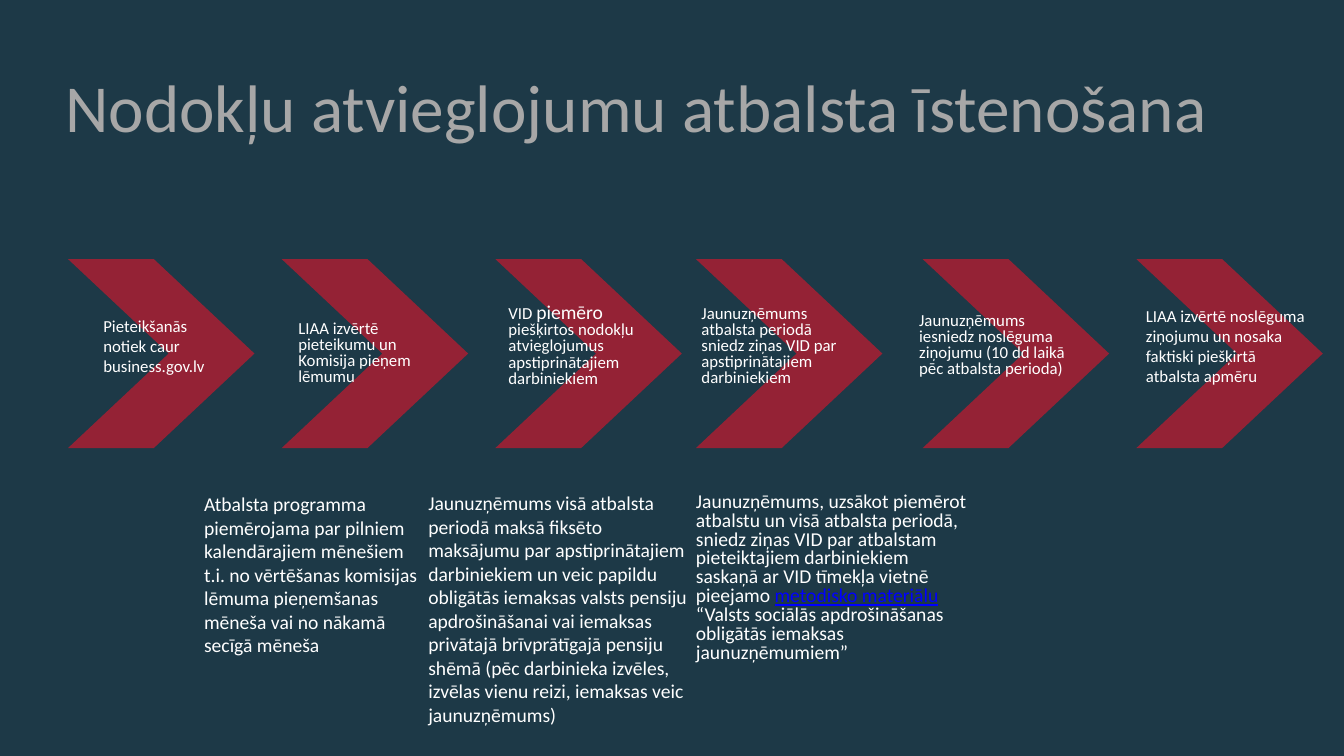
from dataclasses import dataclass
from typing import Optional

from pptx import Presentation
from pptx.dml.color import RGBColor
from pptx.enum.shapes import MSO_SHAPE
from pptx.enum.text import MSO_ANCHOR, MSO_AUTO_SIZE, PP_ALIGN
from pptx.util import Emu, Pt

PX = 9144  # 100 px to the inch


@dataclass(frozen=True)
class Theme:
    font: str = "Calibri"
    background: RGBColor = RGBColor(0x1D, 0x39, 0x47)
    chevron: RGBColor = RGBColor(0x94, 0x22, 0x35)
    title: RGBColor = RGBColor(0xA7, 0xA7, 0xA7)
    text: RGBColor = RGBColor(0xFF, 0xFF, 0xFF)
    link: RGBColor = RGBColor(0x00, 0x00, 0xFF)
    title_size: int = 96
    step_size: int = 24
    note_size: int = 28


THEME = Theme()


@dataclass(frozen=True)
class Span:
    text: str
    size: Optional[int] = None
    link: bool = False


@dataclass(frozen=True)
class Box:
    left: int
    top: int
    width: int
    height: int
    spans: tuple[Span, ...]
    inset: int
    spacing: Optional[float] = None
    grow: bool = True


# Chevron row: an even pitch, with the fourth pulled left
CHEVRON_LEFT, CHEVRON_PITCH = 135, 424
CHEVRON_TOP, CHEVRON_W, CHEVRON_H = 514, 370, 375
CHEVRON_SHIFT = {3: -26}

STEPS = (
    Box(194, 615, 251, 143, (Span("Pieteikšanās notiek caur business.gov.lv"),), 11),
    Box(581, 610, 280, 184,
        (Span("LIAA izvērtē pieteikumu un Komisija pieņem lēmumu"),), 11, 0.8),
    Box(998, 591, 280, 190,
        (Span("VID "), Span("piemēro", size=THEME.note_size),
         Span(" piešķirtos nodokļu atvieglojumus apstiprinātajiem darbiniekiem")), 11, 0.8),
    Box(1381, 595, 322, 185,
        (Span("Jaunuzņēmums atbalsta periodā sniedz ziņas VID par "
              "apstiprinātajiem darbiniekiem"),), 11, 0.8),
    Box(1813, 610, 343, 152,
        (Span("Jaunuzņēmums iesniedz noslēguma ziņojumu "
              "(10 dd laikā pēc atbalsta perioda)"),), 11, 0.8),
    Box(2269, 600, 343, 172,
        (Span("LIAA izvērtē noslēguma ziņojumu un nosaka faktiski "
              "piešķirtā atbalsta apmēru"),), 5),
)

NOTES = (
    Box(399, 970, 441, 376,
        (Span("Atbalsta programma piemērojama par pilniem kalendārajiem mēnešiem "
              "t.i. no vērtēšanas komisijas lēmuma pieņemšanas mēneša vai no "
              "nākamā secīgā mēneša"),), 6),
    Box(844, 968, 537, 517,
        (Span("Jaunuzņēmums visā atbalsta periodā maksā fiksēto maksājumu par "
              "apstiprinātajiem darbiniekiem un veic papildu obligātās iemaksas "
              "valsts pensiju apdrošināšanai vai iemaksas privātajā brīvprātīgajā "
              "pensiju shēmā (pēc darbinieka izvēles, izvēlas vienu reizi, "
              "iemaksas veic jaunuzņēmums)"),), 6),
    Box(1381, 979, 537, 505,
        (Span("Jaunuzņēmums, uzsākot piemērot atbalstu un visā atbalsta periodā, "
              "sniedz ziņas VID par atbalstam pieteiktajiem darbiniekiem saskaņā "
              "ar VID tīmekļa vietnē pieejamo "),
         Span("metodisko materiālu", link=True),
         Span(" “Valsts sociālās apdrošināšanas obligātās iemaksas "
              "jaunuzņēmumiem”")), 0, 0.8, grow=False),
)


def px(n: int) -> Emu:
    return Emu(n * PX)


def set_frame(tf, inset: int, anchor: MSO_ANCHOR, grow: bool) -> None:
    tf.word_wrap = True
    tf.auto_size = MSO_AUTO_SIZE.SHAPE_TO_FIT_TEXT if grow else MSO_AUTO_SIZE.NONE
    tf.vertical_anchor = anchor
    tf.margin_left = tf.margin_right = px(inset)
    tf.margin_top = tf.margin_bottom = px(inset)


def set_font(font, size: int, color: RGBColor) -> None:
    font.name = THEME.font
    font.size = Pt(size)
    font.color.rgb = color


def add_title(s, text: str) -> None:
    sp = s.shapes.title
    sp.left, sp.top, sp.width, sp.height = px(130), px(174), px(2596), px(358)
    set_frame(sp.text_frame, 0, MSO_ANCHOR.TOP, grow=False)
    p = sp.text_frame.paragraphs[0]
    p.text = text
    p.alignment = PP_ALIGN.LEFT
    p.line_spacing = 0.7
    set_font(p.font, THEME.title_size, THEME.title)


def add_chevron(s, index: int) -> None:
    left = CHEVRON_LEFT + index * CHEVRON_PITCH + CHEVRON_SHIFT.get(index, 0)
    sp = s.shapes.add_shape(MSO_SHAPE.CHEVRON, px(left), px(CHEVRON_TOP),
                            px(CHEVRON_W), px(CHEVRON_H))
    sp.adjustments[0] = 0.54
    sp.shadow.inherit = False
    sp.fill.solid()
    sp.fill.fore_color.rgb = THEME.chevron
    sp.line.fill.background()


def add_text(s, box: Box, size: int, anchor: MSO_ANCHOR) -> None:
    sp = s.shapes.add_textbox(px(box.left), px(box.top), px(box.width), px(box.height))
    set_frame(sp.text_frame, box.inset, anchor, box.grow)
    p = sp.text_frame.paragraphs[0]
    p.alignment = PP_ALIGN.LEFT
    if box.spacing:
        p.line_spacing = box.spacing
    set_font(p.font, size, THEME.text)
    for span in box.spans:
        r = p.add_run()
        r.text = span.text
        set_font(r.font, span.size or size, THEME.link if span.link else THEME.text)
        if span.link:
            r.font.underline = True


def main() -> None:
    prs = Presentation()
    prs.slide_width, prs.slide_height = px(2667), px(1500)
    s = prs.slides.add_slide(prs.slide_layouts[5])
    s.background.fill.solid()
    s.background.fill.fore_color.rgb = THEME.background

    # Process arrows behind the text
    for i in range(len(STEPS)):
        add_chevron(s, i)

    add_title(s, "Nodokļu atvieglojumu atbalsta īstenošana")

    # Step labels, then the explanations below them
    for box in STEPS:
        add_text(s, box, THEME.step_size, MSO_ANCHOR.MIDDLE)
    for box in NOTES:
        add_text(s, box, THEME.note_size, MSO_ANCHOR.TOP)

    prs.save("out.pptx")


if __name__ == "__main__":
    main()
